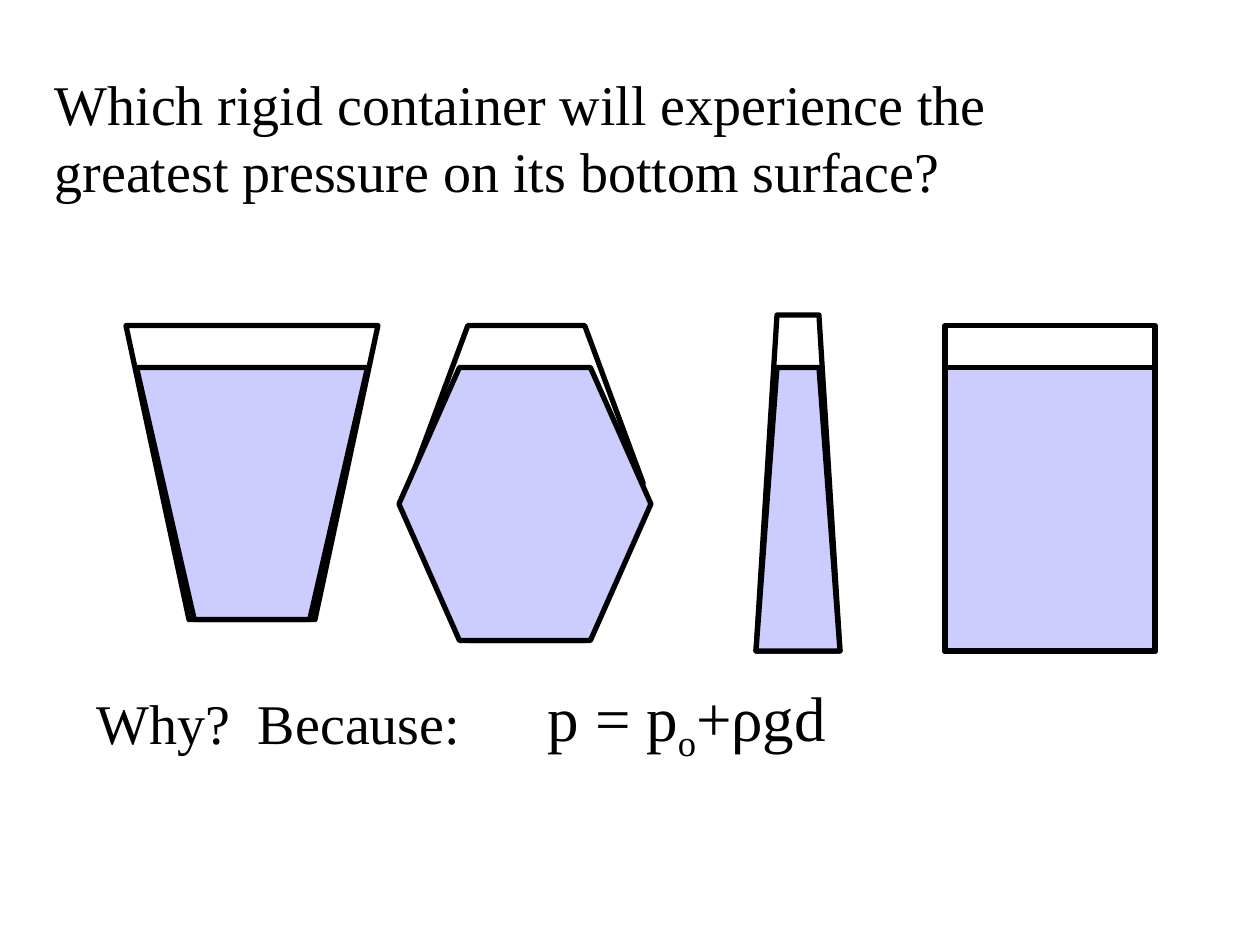
from pptx import Presentation
from pptx.dml.color import RGBColor
from pptx.enum.shapes import MSO_SHAPE
from pptx.enum.text import MSO_ANCHOR, MSO_AUTO_SIZE, PP_ALIGN
from pptx.util import Pt

PX = 9525
TITLE_ONLY = 5
RECT, HEXAGON = MSO_SHAPE.RECTANGLE, MSO_SHAPE.HEXAGON
TOP, LEFT, NO_FIT = MSO_ANCHOR.TOP, PP_ALIGN.LEFT, MSO_AUTO_SIZE.NONE
COLORS = {"ink": "000000", "glass": "FFFFFF", "water": "CCCCFF"}
FONT = "Times New Roman"


class Deck:
    def __init__(self, width, height):
        self.prs = Presentation()
        self.prs.slide_width, self.prs.slide_height = width * PX, height * PX
        self.s = self.prs.slides.add_slide(self.prs.slide_layouts[TITLE_ONLY])

    def color(self, name):
        return RGBColor.from_string(COLORS[name])

    def paint(self, sp, fill):
        sp.shadow.inherit = False
        sp.fill.solid()
        sp.fill.fore_color.rgb = self.color(fill)
        sp.line.color.rgb = self.color("ink")
        sp.line.width = Pt(3)

    def shape(self, kind, box, fill, adj=None):
        sp = self.s.shapes.add_shape(kind, *(v * PX for v in box))
        if adj is not None:
            sp.adjustments[0] = adj
        self.paint(sp, fill)

    def trapezoid(self, top_edge, bottom_edge, top, bottom, fill):
        (tl, tr), (bl, br) = top_edge, bottom_edge
        fb = self.s.shapes.build_freeform(tl, top, scale=PX)
        fb.add_line_segments([(bl, bottom), (br, bottom), (tr, top)], close=True)
        self.paint(fb.convert_to_shape(), fill)

    def format_text(self, sp, size):
        tf = sp.text_frame
        tf.word_wrap = True
        tf.auto_size = NO_FIT
        tf.vertical_anchor = TOP
        p = tf.paragraphs[0]
        p.alignment = LEFT
        for r in p.runs:
            r.font.name = FONT
            r.font.size = Pt(size)
            r.font.color.rgb = self.color("ink")

    def title(self, text, box, size):
        sp = self.s.shapes.title
        sp.left, sp.top, sp.width, sp.height = (v * PX for v in box)
        sp.text_frame.text = text
        self.format_text(sp, size)

    def text(self, parts, box, size, subscript=None):
        sp = self.s.shapes.add_textbox(*(v * PX for v in box))
        p = sp.text_frame.paragraphs[0]
        for part in parts:
            r = p.add_run()
            r.text = part
            if part == subscript:
                r.font._element.set("baseline", "-25000")
        self.format_text(sp, size)
        return sp


def main():
    deck = Deck(960, 720)
    deck.title("Which rigid container will experience the greatest pressure "
               "on its bottom surface?", (32, 48, 800, 112), 32)

    deck.trapezoid((96, 288), (144, 240), 248, 472, "glass")
    deck.shape(HEXAGON, (312, 248, 178, 240), "glass", 0.25)
    deck.trapezoid((592, 624), (576, 640), 240, 496, "glass")
    deck.shape(RECT, (720, 248, 160, 248), "glass")

    deck.trapezoid((104, 280), (148, 236), 280, 472, "water")
    deck.shape(HEXAGON, (304, 280, 192, 208), "water", 0.24)
    deck.trapezoid((592, 624), (576, 640), 280, 496, "water")
    deck.shape(RECT, (720, 280, 160, 216), "water")

    why = deck.text(["Why?  Because:"], (64, 520, 328, 60), 32)
    formula = deck.text(["p = p", "o", "+ρgd"], (408, 512, 288, 67), 36, "o")
    deck.s.shapes.add_group_shape([why, formula])
    deck.prs.save("out.pptx")


if __name__ == "__main__":
    main()
